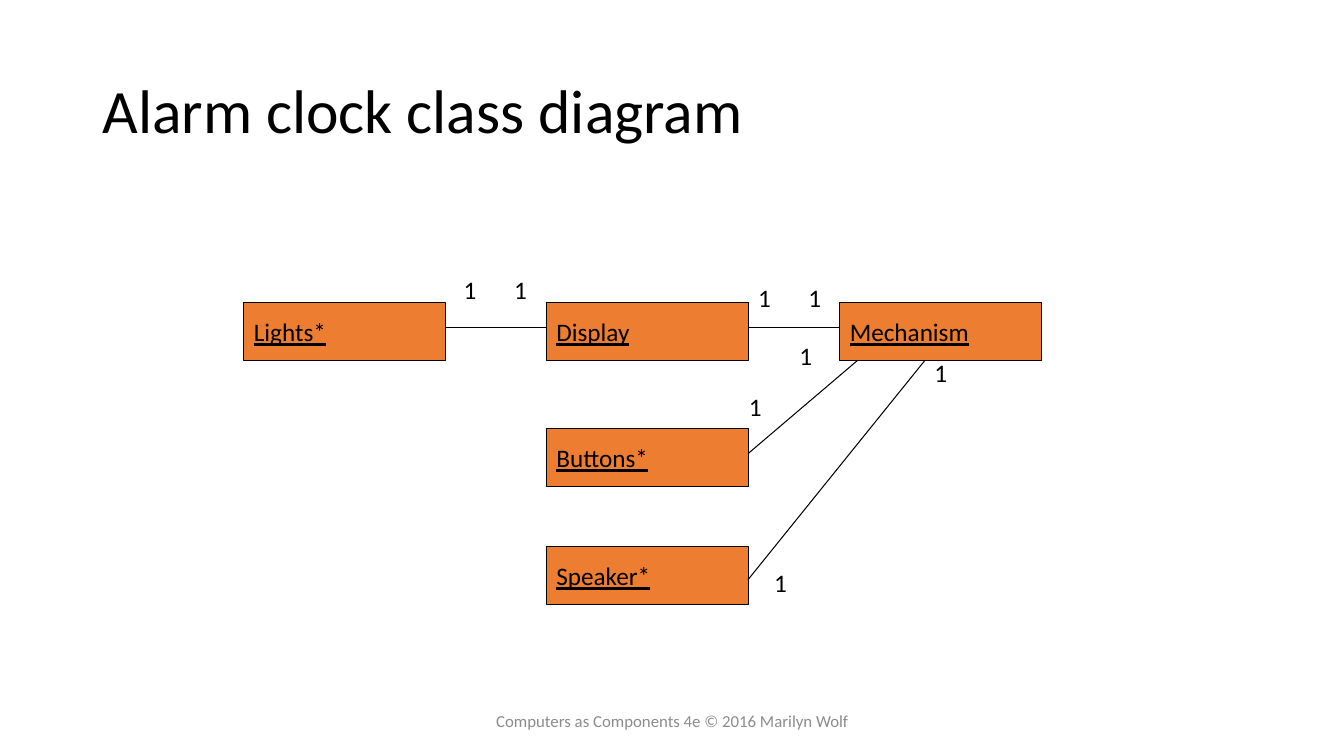
import pptx
import pptx.dml.color
import pptx.enum.shapes
import pptx.enum.text
import pptx.oxml
import pptx.util
from dataclasses import dataclass

Inches = pptx.util.Inches
Align = pptx.enum.text.PP_ALIGN
Anchor = pptx.enum.text.MSO_ANCHOR


@dataclass(frozen=True)
class Theme:
    font: str = "Calibri"
    ink: str = "000000"
    box_fill: str = "ED7D31"
    footer_ink: str = "8C8C8C"
    title_size: int = 44
    body_size: int = 18
    footer_size: int = 12
    line_width: float = 0.75


def rgb(code):
    return pptx.dml.color.RGBColor.from_string(code)


def apply_format(target, values):
    for name, value in values.items():
        setattr(target, name, value)


class ClassDiagram:
    """Draws the parts of a class diagram on one slide in one theme."""

    def __init__(self, slide, theme):
        self.shapes = slide.shapes
        self.theme = theme

    def set_text(self, frame, wording, size, color, frame_format,
                 align=Align.LEFT, spacing=1.0, underline=False):
        apply_format(frame, frame_format)
        paragraph = frame.paragraphs[0]
        apply_format(paragraph, {"alignment": align, "line_spacing": spacing})
        run = paragraph.add_run()
        run.text = wording
        apply_format(run.font, {"name": self.theme.font,
                                "size": pptx.util.Pt(size),
                                "underline": underline})
        run.font.color.rgb = rgb(color)

    def outline(self, line):
        line.color.rgb = rgb(self.theme.ink)
        line.width = pptx.util.Pt(self.theme.line_width)

    def label(self, bounds, wording, size, color, wrap=True,
              anchor=Anchor.MIDDLE, **style):
        area = self.shapes.add_textbox(*map(Inches, bounds))
        self.set_text(area.text_frame, wording, size, color,
                      {"word_wrap": wrap, "vertical_anchor": anchor}, **style)

    def class_box(self, left, top, name):
        box = self.shapes.add_shape(
            pptx.enum.shapes.MSO_SHAPE.RECTANGLE,
            *map(Inches, (left, top, BOX_WIDTH, BOX_HEIGHT)))
        box.shadow.inherit = False
        box.fill.solid()
        box.fill.fore_color.rgb = rgb(self.theme.box_fill)
        self.outline(box.line)
        self.set_text(box.text_frame, name, self.theme.body_size,
                      self.theme.ink,
                      {"word_wrap": False, "vertical_anchor": Anchor.MIDDLE},
                      underline=True)

    def association(self, start, end):
        link = self.shapes.add_connector(
            pptx.enum.shapes.MSO_CONNECTOR.STRAIGHT,
            *map(Inches, (*start, *end)))
        self.outline(link.line)
        link._element.spPr.append(pptx.oxml.parse_xml(
            '<a:effectLst xmlns:a='
            '"http://schemas.openxmlformats.org/drawingml/2006/main"/>'))

    def multiplicity(self, left, top):
        self.label((left, top, 0.33, 0.4), "1", self.theme.body_size,
                   self.theme.ink, wrap=False, anchor=Anchor.TOP)


BOX_WIDTH, BOX_HEIGHT = 2, 0.58
PORT_DROP = 0.25  # from a box's top to where its side association meets it
LIGHTS_X, DISPLAY_X, MECHANISM_X = 2.42, 5.42, 8.33
TOP_ROW, BUTTONS_ROW, SPEAKER_ROW = 3, 4.25, 5.42

CLASSES = [
    (LIGHTS_X, TOP_ROW, "Lights*"),
    (DISPLAY_X, TOP_ROW, "Display"),
    (MECHANISM_X, TOP_ROW, "Mechanism"),
    (DISPLAY_X, BUTTONS_ROW, "Buttons*"),
    (DISPLAY_X, SPEAKER_ROW, "Speaker*"),
]
DISPLAY_RIGHT = DISPLAY_X + BOX_WIDTH
TOP_PORT = TOP_ROW + PORT_DROP
MECHANISM_BOTTOM = TOP_ROW + BOX_HEIGHT
ASSOCIATIONS = [
    ((LIGHTS_X + BOX_WIDTH, TOP_PORT), (DISPLAY_X, TOP_PORT)),
    ((DISPLAY_RIGHT, TOP_PORT), (MECHANISM_X, TOP_PORT)),
    ((DISPLAY_RIGHT, BUTTONS_ROW + PORT_DROP), (8.5, MECHANISM_BOTTOM)),
    ((DISPLAY_RIGHT, 5.75), (9.17, MECHANISM_BOTTOM)),
]
MULTIPLICITIES = [
    (4.5, 2.67), (5, 2.67),
    (7.42, 2.75), (7.92, 2.75),
    (7.33, 3.83), (7.83, 3.33),
    (7.58, 5.58), (9.17, 3.5),
]


def main():
    deck = pptx.Presentation()
    apply_format(deck, {"slide_width": Inches(13.33),
                        "slide_height": Inches(7.5)})
    theme = Theme()
    diagram = ClassDiagram(deck.slides.add_slide(deck.slide_layouts[6]), theme)

    diagram.label((0.92, 0.4, 11.5, 1.45), "Alarm clock class diagram",
                  theme.title_size, theme.ink, spacing=0.9)
    for class_entry in CLASSES:
        diagram.class_box(*class_entry)
    for ends in ASSOCIATIONS:
        diagram.association(*ends)
    for position in MULTIPLICITIES:
        diagram.multiplicity(*position)
    diagram.label((4.42, 6.95, 4.5, 0.4),
                  "Computers as Components 4e © 2016 Marilyn Wolf",
                  theme.footer_size, theme.footer_ink, align=Align.CENTER)
    deck.save("out.pptx")


if __name__ == "__main__":
    main()
